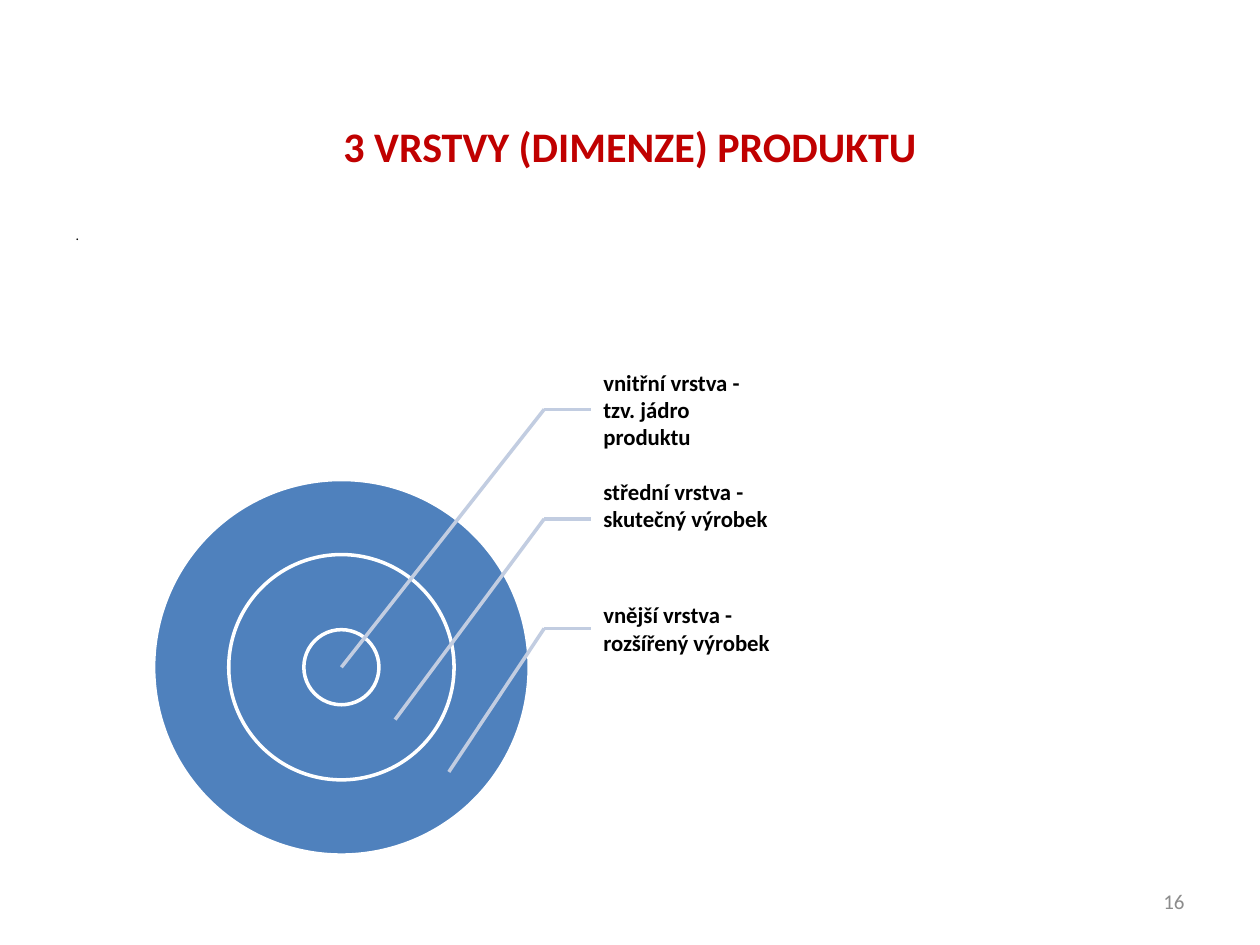
from dataclasses import dataclass

from lxml.etree import SubElement
from pptx import Presentation
from pptx.dml.color import RGBColor
from pptx.enum.shapes import MSO_CONNECTOR, MSO_SHAPE
from pptx.enum.text import MSO_ANCHOR, PP_ALIGN
from pptx.oxml.ns import qn
from pptx.util import Pt


@dataclass(frozen=True)
class Theme:
    """Colours, type sizes and font of the slide."""
    font: str = "Calibri"
    title: str = "C00000"
    text: str = "000000"
    number: str = "8C8C8C"
    ring: str = "4F81BD"
    outline: str = "FFFFFF"
    leader: str = "C2CDE1"
    title_size: float = 24
    body_size: float = 8
    label_size: float = 13
    number_size: float = 12
    line_width: float = 2


THEME = Theme()
LABELS = [
    ("vnitřní vrstva - tzv. jádro produktu", 0),
    ("střední vrstva - skutečný výrobek", 15.6),
    ("vnější vrstva - rozšířený výrobek", 0),
]


def place(sp, box):
    """Move a shape to a box of left, top, width and height in points."""
    sp.left, sp.top, sp.width, sp.height = (Pt(v) for v in box)


def write_text(sp, text, size, color, bold=False, align=PP_ALIGN.LEFT,
               anchor=MSO_ANCHOR.MIDDLE, insets=(7.2, 3.6, 7.2, 3.6)):
    """Write one formatted paragraph into a shape and return it."""
    tf = sp.text_frame
    tf.word_wrap = True
    tf.vertical_anchor = anchor
    tf.margin_left, tf.margin_top, tf.margin_right, tf.margin_bottom = (
        Pt(v) for v in insets)
    p = tf.paragraphs[0]
    p.alignment = align
    p.space_before = Pt(0)
    r = p.add_run()
    r.text = text
    r.font.name, r.font.size, r.font.bold = THEME.font, Pt(size), bold
    r.font.color.rgb = RGBColor.from_string(color)
    return p


def add_title(s, box):
    """Fill the title placeholder."""
    sp = s.shapes.title
    place(sp, box)
    write_text(sp, "3 VRSTVY (DIMENZE) PRODUKTU", THEME.title_size,
               THEME.title, bold=True, align=PP_ALIGN.CENTER)


def add_body(s, box):
    """Fill the body placeholder with an unbulleted paragraph."""
    sp = s.placeholders[1]
    place(sp, box)
    p = write_text(sp, ".", THEME.body_size, THEME.text, anchor=MSO_ANCHOR.TOP)
    pPr = p._p.get_or_add_pPr()
    pPr.set("marL", str(Pt(27)))
    pPr.set("indent", str(-Pt(27)))
    SubElement(pPr, qn("a:buNone"))


def add_leader(s, start, end):
    """Draw a straight leader line between two points."""
    c = s.shapes.add_connector(MSO_CONNECTOR.STRAIGHT,
                               *(Pt(v) for v in (*start, *end)))
    c.line.color.rgb = RGBColor.from_string(THEME.leader)
    c.line.width = Pt(THEME.line_width)
    SubElement(c._element.spPr, qn("a:effectLst"))


def add_rings(s, box):
    """Draw three concentric circles and return their centre."""
    left, top, size, _ = box
    cx, cy = left + size / 2, top + size / 2
    for share in (1, 0.6, 0.2):
        d = size * share
        sp = s.shapes.add_shape(MSO_SHAPE.OVAL, 0, 0, 0, 0)
        place(sp, (cx - d / 2, cy - d / 2, d, d))
        sp.shadow.inherit = False
        sp.fill.solid()
        sp.fill.fore_color.rgb = RGBColor.from_string(THEME.ring)
        sp.line.color.rgb = RGBColor.from_string(THEME.outline)
        sp.line.width = Pt(THEME.line_width)
    return cx, cy


def add_labels(s, box, centre):
    """Stack the layer labels and lead each one to its ring."""
    left, top, width, height = box
    cx, cy = centre
    row = height / len(LABELS)
    elbow = left - 26.7
    for i, (text, lift) in enumerate(LABELS):
        y = top + row * i
        sp = s.shapes.add_textbox(0, 0, 0, 0)
        place(sp, (left, y, width, row))
        write_text(sp, text, THEME.label_size, THEME.text, bold=True,
                   insets=(7.2, 1.4, 1.4, 1.4 + lift))
        mid = y + row / 2
        add_leader(s, (elbow, mid), (left, mid))
        add_leader(s, (elbow, mid), (cx + 30.7 * i, cy + 29.9 * i))


def add_number(s, box):
    """Add the slide number."""
    sp = s.shapes.add_textbox(0, 0, 0, 0)
    place(sp, box)
    write_text(sp, "16", THEME.number_size, THEME.number, align=PP_ALIGN.RIGHT)


def main():
    """Build and save the slide."""
    prs = Presentation()
    prs.slide_width, prs.slide_height = Pt(720), Pt(540)
    s = prs.slides.add_slide(prs.slide_layouts[1])
    add_title(s, (36, 54.7, 648, 56.9))
    add_body(s, (36, 126, 648, 356.4))
    centre = add_rings(s, (87.8, 274, 214.6, 214.6))
    add_labels(s, (337.7, 202.6, 107.3, 187.8), centre)
    add_number(s, (516.2, 500.4, 167.8, 28.8))
    prs.save("out.pptx")


if __name__ == "__main__":
    main()
